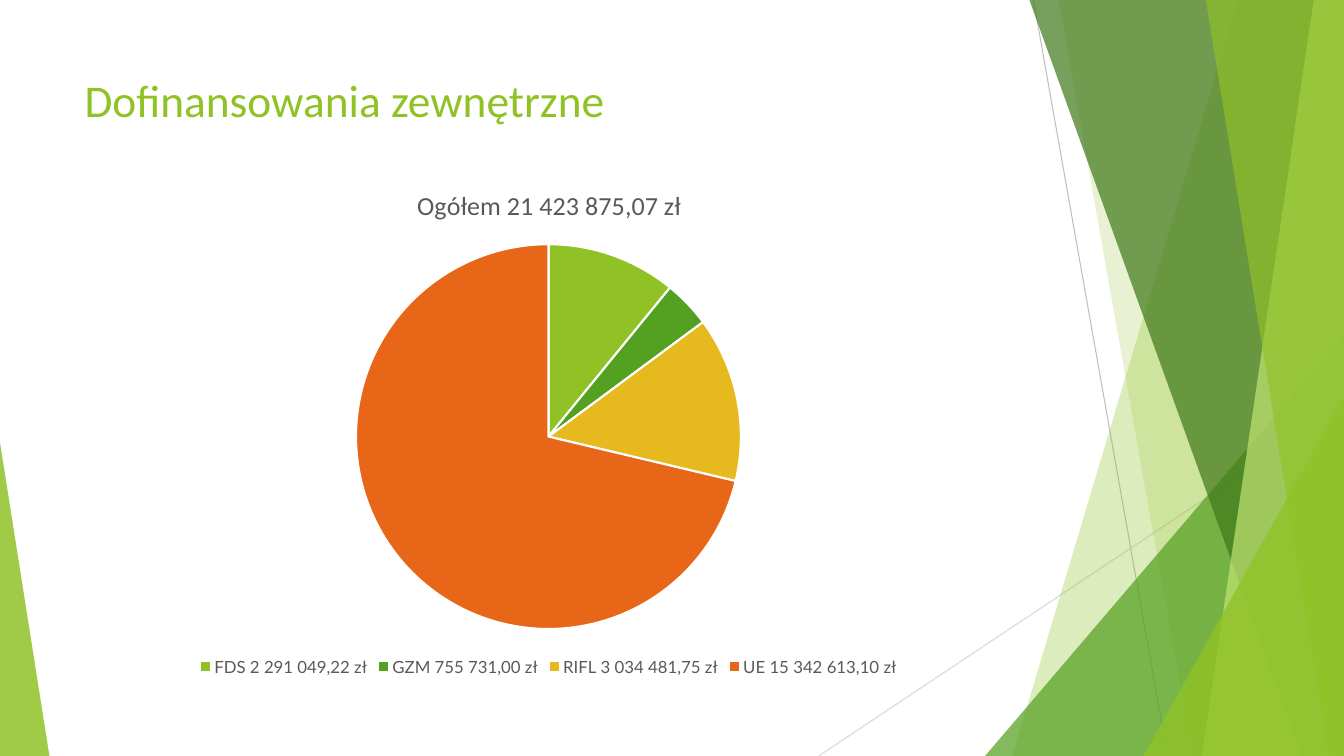
import dataclasses

import lxml.etree
import pptx
import pptx.chart.data
import pptx.dml.color
import pptx.enum.chart
import pptx.enum.shapes
import pptx.enum.text
import pptx.oxml
import pptx.oxml.ns
import pptx.util

Inches = pptx.util.Inches
Pt = pptx.util.Pt
qn = pptx.oxml.ns.qn


@dataclasses.dataclass(frozen=True)
class Theme:
    """Colours, fonts and type sizes."""
    lime: str = "90C226"
    green: str = "54A021"
    forest: str = "3F7819"
    pale: str = "C0E474"
    gold: str = "E6B91E"
    orange: str = "E76618"
    white: str = "FFFFFF"
    grey: str = "595959"
    rule_dark: str = "BFBFBF"
    rule_light: str = "D9D9D9"
    heading_font: str = "Calibri"
    chart_font: str = "Lato"
    heading_size: float = 32.4
    chart_title_size: float = 18.6
    legend_size: float = 12
    chart_size: float = 10


@dataclasses.dataclass(frozen=True)
class Box:
    """A region of the slide, in inches."""
    left: float
    top: float
    width: float
    height: float

    @property
    def right(self):
        """Return the right edge."""
        return self.left + self.width

    @property
    def bottom(self):
        """Return the bottom edge."""
        return self.top + self.height

    def lengths(self):
        """Return the box as slide lengths."""
        return [Inches(value) for value in dataclasses.astuple(self)]


THEME = Theme()
SLIDE = Box(0, 0, 13.33, 7.5)
HEADING = Box(0.74, 0.67, 9.4, 0.7)
CHART = Box(0.04, 1.66, 10.8, 5.09)
SHARES = [
    ("FDS 2 291 049,22 zł", 11, THEME.lime),
    ("GZM 755 731,00 zł", 4, THEME.green),
    ("RIFL 3 034 481,75 zł", 14, THEME.gold),
    ("UE 15 342 613,10 zł", 72, THEME.orange),
]


def rgb(colour):
    """Turn a hex string into a colour."""
    return pptx.dml.color.RGBColor.from_string(colour)


def style_font(font, name, size, colour):
    """Set the face, size and colour of a font."""
    font.name = name
    font.size = Pt(size)
    font.bold = False
    font.color.rgb = rgb(colour)


def paint(shape, colour, opacity):
    """Give a shape a translucent fill without line or shadow."""
    shape.shadow.inherit = False
    shape.line.fill.background()
    shape.fill.solid()
    shape.fill.fore_color.rgb = rgb(colour)
    tint = shape._element.spPr.find(qn("a:solidFill"))[0]
    lxml.etree.SubElement(tint, qn("a:alpha"), val=str(opacity * 1000))


def add_rule(page, start, end, colour):
    """Draw a thin straight line."""
    points = [Inches(value) for value in (*start, *end)]
    rule = page.shapes.add_connector(pptx.enum.shapes.MSO_CONNECTOR.STRAIGHT, *points)
    rule.line.color.rgb = rgb(colour)
    rule.line.width = Pt(0.75)
    lxml.etree.SubElement(rule._element.spPr, qn("a:effectLst"))


def add_ribbon(page, box, top_x, bottom_x, colour, opacity):
    """Fill from a slanted left side to the right edge of the box."""
    builder = page.shapes.build_freeform(Inches(top_x), Inches(box.top))
    corners = [(box.right, box.top), (box.right, box.bottom), (bottom_x, box.bottom)]
    builder.add_line_segments([(Inches(x), Inches(y)) for x, y in corners], close=True)
    paint(builder.convert_to_shape(), colour, opacity)


def add_wedge(page, box, apex, colour, opacity):
    """Draw a triangle whose apex sits at a fraction of the width."""
    wedge = page.shapes.add_shape(
        pptx.enum.shapes.MSO_SHAPE.ISOSCELES_TRIANGLE, *box.lengths())
    wedge.adjustments[0] = apex
    paint(wedge, colour, opacity)


def add_corner_wedge(page, box, width, height, colour, opacity):
    """Place a wedge in the bottom right corner of the box."""
    corner = Box(box.right - width, box.bottom - height, width, height)
    add_wedge(page, corner, 1, colour, opacity)


def add_facets(page, box):
    """Draw the layered green decoration at both sides."""
    add_rule(page, (10.25, box.top), (11.58, box.bottom), THEME.rule_dark)
    add_rule(page, (box.right, 4.03), (8.12, box.bottom), THEME.rule_light)
    add_ribbon(page, box, 12.28, 10.04, THEME.lime, 30)
    add_ribbon(page, box, 10.5, 11.83, THEME.lime, 20)
    add_corner_wedge(page, box, 3.56, 4.17, THEME.green, 72)
    add_ribbon(page, box, 10.21, 12.91, THEME.forest, 70)
    add_ribbon(page, box, 13.03, 11.92, THEME.pale, 70)
    add_ribbon(page, box, 11.96, 13.18, THEME.lime, 65)
    add_corner_wedge(page, box, 1.99, 3.57, THEME.lime, 80)
    add_wedge(page, Box(box.left, box.bottom - 3.11, 0.49, 3.11), 0, THEME.lime, 85)


def add_heading(page, box):
    """Write the slide heading."""
    frame = page.shapes.add_textbox(*box.lengths()).text_frame
    frame.word_wrap = True
    frame.vertical_anchor = pptx.enum.text.MSO_ANCHOR.TOP
    frame.text = "Dofinansowania zewnętrzne"
    span = frame.paragraphs[0].runs[0]
    style_font(span.font, THEME.heading_font, THEME.heading_size, THEME.lime)


def fix_layout(parent, before, **settings):
    """Insert a manual layout ahead of the given chart child."""
    for old in parent.findall(qn("c:layout")):
        parent.remove(old)
    layout = parent.makeelement(qn("c:layout"))
    manual = lxml.etree.SubElement(layout, qn("c:manualLayout"))
    for name, value in settings.items():
        lxml.etree.SubElement(manual, qn(f"c:{name}"), val=str(value))
    parent.find(qn(f"c:{before}")).addprevious(layout)


def add_funding_chart(page, box):
    """Draw the pie of funding sources with its title and legend."""
    data = pptx.chart.data.CategoryChartData()
    data.categories = [label for label, _, _ in SHARES]
    data.add_series("Series 1", [share for _, share, _ in SHARES])
    chart = page.shapes.add_chart(
        pptx.enum.chart.XL_CHART_TYPE.PIE, *box.lengths(), data).chart
    style_font(chart.font, THEME.chart_font, THEME.chart_size, THEME.grey)

    title = chart.chart_title.text_frame
    title.text = "Ogółem 21 423 875,07 zł"
    style_font(title.paragraphs[0].runs[0].font, THEME.heading_font,
               THEME.chart_title_size, THEME.grey)
    fix_layout(chart.chart_title._element, "overlay",
               xMode="edge", yMode="edge", x=3 / 8, y=0.03)

    chart.has_legend = True
    chart.legend.position = pptx.enum.chart.XL_LEGEND_POSITION.BOTTOM
    chart.legend.include_in_layout = False
    style_font(chart.legend.font, THEME.chart_font, THEME.legend_size, THEME.grey)

    plot = chart.plots[0]
    plot.vary_by_categories = True
    for index, (_, _, colour) in enumerate(SHARES):
        slice_format = plot.series[0].points[index].format
        slice_format.fill.solid()
        slice_format.fill.fore_color.rgb = rgb(colour)
        slice_format.line.color.rgb = rgb(THEME.white)
        slice_format.line.width = Pt(1.5)
    fix_layout(plot._element.getparent(), "pieChart", layoutTarget="inner",
               xMode="edge", yMode="edge", x=0.32, y=0.15, w=0.36, h=0.75)


def main():
    """Build and save the deck."""
    deck = pptx.Presentation()
    deck.slide_width = Inches(SLIDE.width)
    deck.slide_height = Inches(SLIDE.height)
    page = deck.slides.add_slide(deck.slide_layouts[6])
    add_facets(page, SLIDE)
    add_heading(page, HEADING)
    add_funding_chart(page, CHART)
    deck.save("out.pptx")


if __name__ == "__main__":
    main()
